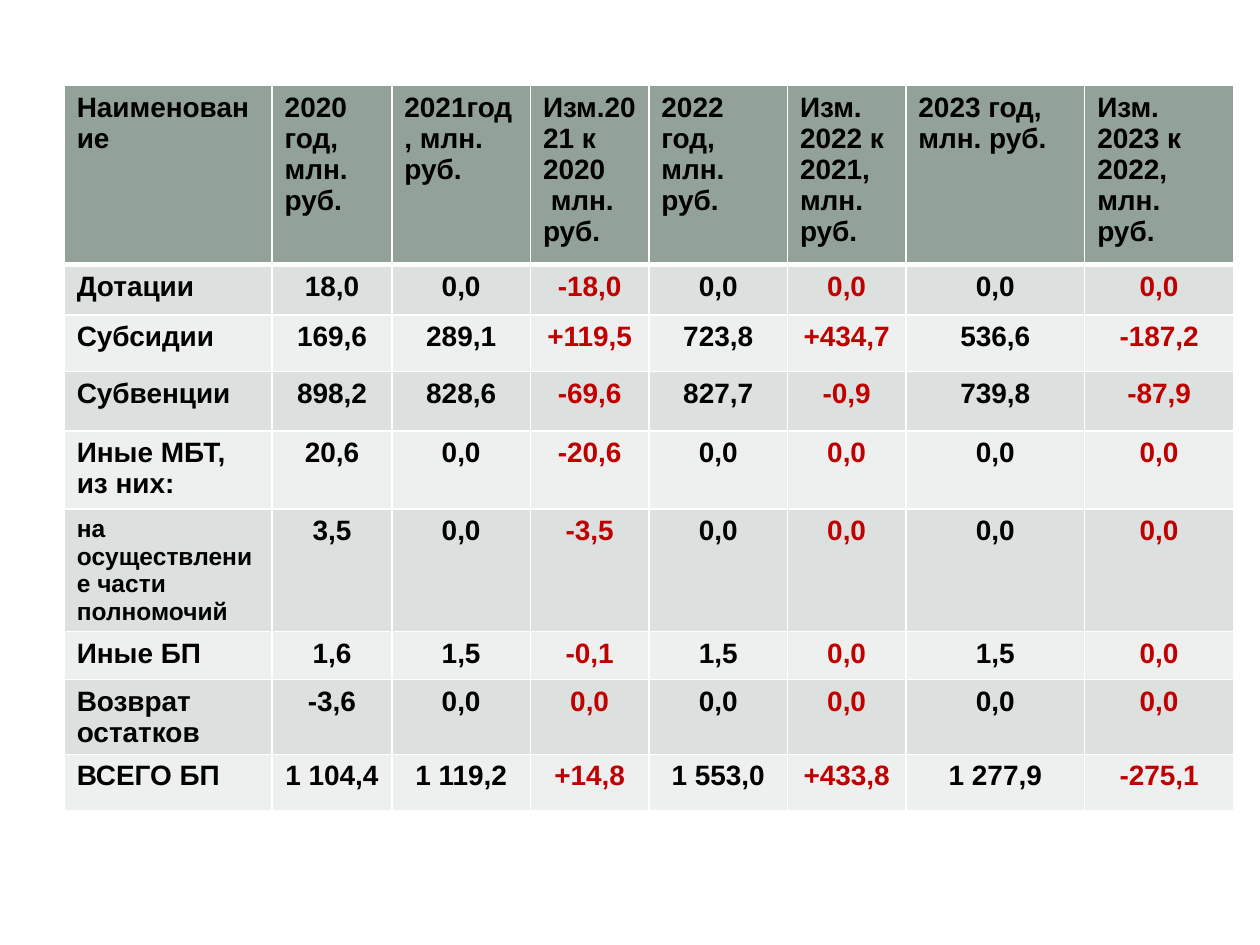
from lxml import etree
from pptx import Presentation
from pptx.dml.color import RGBColor
from pptx.enum.text import PP_ALIGN
from pptx.oxml.ns import qn
from pptx.util import Inches, Pt

LEFT, CENTER = PP_ALIGN.LEFT, PP_ALIGN.CENTER
FONT = "Arial"
COLORS = {
    "header": "93A299",
    "odd": "DCE0DE",
    "even": "EEF0EF",
    "border": "FFFFFF",
    "text": "000000",
    "change": "C00000",
}
COL_WIDTHS = [1.65, 0.95, 1.1, 0.94, 1.1, 0.94, 1.42, 1.18]
ROW_HEIGHTS = [1.42, 0.4, 0.45, 0.47, 0.62, 0.88, 0.38, 0.55, 0.45]
CHANGE_COLS = (3, 5, 7)
DETAIL_ROW = 5

ROWS = [
    ["Наименование", "2020 год, млн. руб.", "2021год, млн. руб.",
     "Изм.2021 к 2020\n млн. руб.", "2022 год, млн. руб.",
     "Изм. 2022 к 2021, млн. руб.", "2023 год, млн. руб.",
     "Изм. 2023 к 2022, млн. руб."],
    ["Дотации", "18,0", "0,0", "-18,0", "0,0", "0,0", "0,0", "0,0"],
    ["Субсидии", "169,6", "289,1", "+119,5", "723,8", "+434,7", "536,6", "-187,2"],
    ["Субвенции", "898,2", "828,6", "-69,6", "827,7", "-0,9", "739,8", "-87,9"],
    ["Иные МБТ,\nиз них:", "20,6", "0,0", "-20,6", "0,0", "0,0", "0,0", "0,0"],
    ["на осуществление части полномочий",
     "3,5", "0,0", "-3,5", "0,0", "0,0", "0,0", "0,0"],
    ["Иные БП", "1,6", "1,5", "-0,1", "1,5", "0,0", "1,5", "0,0"],
    ["Возврат остатков", "-3,6", "0,0", "0,0", "0,0", "0,0", "0,0", "0,0"],
    ["ВСЕГО БП", "1 104,4", "1 119,2", "+14,8", "1 553,0", "+433,8", "1 277,9", "-275,1"],
]


def rgb(name):
    return RGBColor.from_string(COLORS[name])


def set_borders(cell, top, bottom):
    """Draw all four borders; top and bottom are widths in points."""
    tc_pr = cell._tc.get_or_add_tcPr()
    for side, width in (("L", 1), ("R", 1), ("T", top), ("B", bottom)):
        ln = etree.SubElement(tc_pr, qn(f"a:ln{side}"), w=str(Pt(width)))
        fill = etree.SubElement(ln, qn("a:solidFill"))
        etree.SubElement(fill, qn("a:srgbClr"), val=COLORS["border"])


def style_cell(cell, row, col):
    set_borders(cell, 3 if row == 1 else 1, 3 if row == 0 else 1)
    cell.fill.solid()
    band = "odd" if row % 2 else "even"
    cell.fill.fore_color.rgb = rgb(band if row else "header")
    is_change = row > 0 and col in CHANGE_COLS
    for p in cell.text_frame.paragraphs:
        p.alignment = CENTER if row and col else LEFT
        p.font.name = FONT
        p.font.size = Pt(14 if (row, col) == (DETAIL_ROW, 0) else 16)
        p.font.bold = True
        p.font.color.rgb = rgb("change" if is_change else "text")


def add_transfers_table(s, left, top, width, height):
    table = s.shapes.add_table(len(ROWS), len(COL_WIDTHS),
                               left, top, width, height).table
    for column, w in zip(table.columns, COL_WIDTHS):
        column.width = Inches(w)
    for row, h in zip(table.rows, ROW_HEIGHTS):
        row.height = Inches(h)
    for i, texts in enumerate(ROWS):
        for j, text in enumerate(texts):
            cell = table.cell(i, j)
            cell.text = text
            style_cell(cell, i, j)


def main():
    prs = Presentation()
    prs.slide_width, prs.slide_height = Inches(10), Inches(7.5)
    s = prs.slides.add_slide(prs.slide_layouts[6])
    add_transfers_table(s, Inches(0.51), Inches(0.68),
                        Inches(sum(COL_WIDTHS)), Inches(sum(ROW_HEIGHTS)))
    prs.save("out.pptx")


if __name__ == "__main__":
    main()
